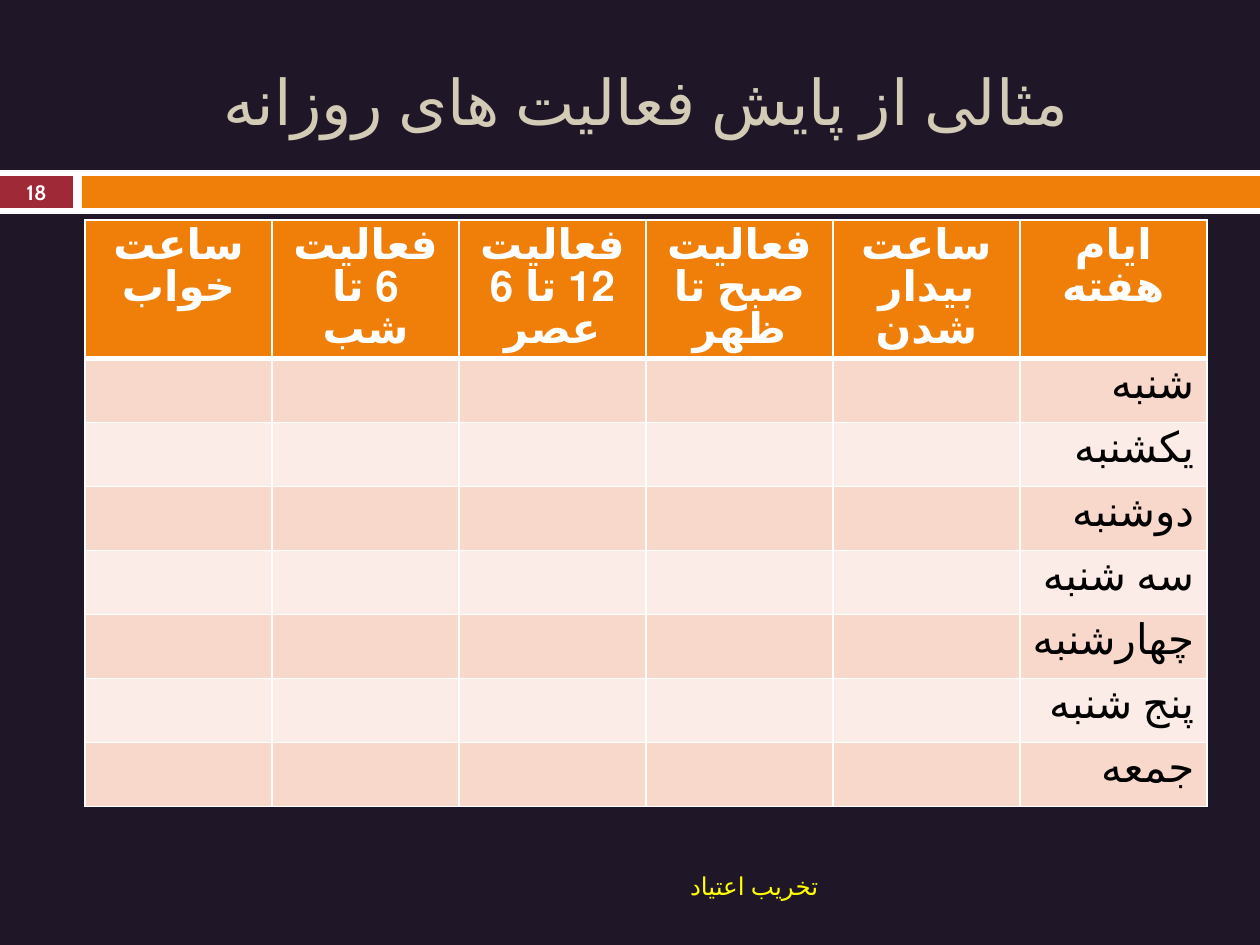
from typing import NamedTuple

from lxml import etree
from pptx import Presentation
from pptx.dml.color import RGBColor
from pptx.enum.lang import MSO_LANGUAGE_ID
from pptx.enum.shapes import MSO_SHAPE
from pptx.enum.text import MSO_ANCHOR, PP_ALIGN
from pptx.oxml.ns import qn
from pptx.util import Emu, Pt

RECT = MSO_SHAPE.RECTANGLE
MIDDLE = MSO_ANCHOR.MIDDLE
CENTER, RIGHT = PP_ALIGN.CENTER, PP_ALIGN.RIGHT
PERSIAN = MSO_LANGUAGE_ID.FARSI

EMU_PER_PX = 914400 // 126
FONT = "Cabin"
WHITE, BLACK, YELLOW = "FFFFFF", "000000", "FFFF00"
BACKGROUND, ORANGE, RED, BEIGE = "1F1727", "F07F09", "9F2936", "D3CBB6"
BAND_FILLS = ("F9D8CC", "FCECE7")

HEADERS = ("ساعت خواب", "فعالیت 6 تا شب", "فعالیت 12 تا 6 عصر",
           "فعالیت صبح تا ظهر", "ساعت بیدار شدن", "ایام هفته")
DAYS = ("شنبه", "یکشنبه", "دوشنبه", "سه شنبه", "چهارشنبه", "پنج شنبه", "جمعه")
COL_WIDTH, HEADER_HEIGHT, DAY_HEIGHT = 187, 138, 64


class Box(NamedTuple):
    left: int
    top: int
    width: int
    height: int


class Style(NamedTuple):
    size: float
    color: str
    align: PP_ALIGN
    bold: bool = False


BARS = (
    (Box(0, 170, 1260, 44), WHITE),
    (Box(0, 176, 73, 32), RED),
    (Box(82, 176, 1178, 32), ORANGE),
)
TITLE_STYLE = Style(36, BEIGE, CENTER)
FOOTER_STYLE = Style(14, YELLOW, RIGHT)
NUMBER_STYLE = Style(11.9, WHITE, CENTER, True)
HEADER_STYLE = Style(24, WHITE, CENTER, True)
DAY_STYLE = Style(24, BLACK, RIGHT)


def px(n: int) -> Emu:
    return Emu(n * EMU_PER_PX)


def emu_box(box: Box) -> list[Emu]:
    return [px(n) for n in box]


def paint(fill, color: str) -> None:
    fill.solid()
    fill.fore_color.rgb = RGBColor.from_string(color)


def write(tf, text: str, style: Style):
    p = tf.paragraphs[0]
    p.alignment = style.align
    r = p.add_run()
    r.text = text
    r.font.name = FONT
    r.font.language_id = PERSIAN
    r.font.size = Pt(style.size)
    r.font.bold = style.bold
    r.font.color.rgb = RGBColor.from_string(style.color)
    return p


def add_bar(s, box: Box, color: str) -> None:
    bar = s.shapes.add_shape(RECT, *emu_box(box))
    bar.shadow.inherit = False
    paint(bar.fill, color)
    bar.line.fill.background()


def add_text(s, box: Box, text: str, style: Style) -> None:
    tf = s.shapes.add_textbox(*emu_box(box)).text_frame
    tf.word_wrap = True
    tf.vertical_anchor = MIDDLE
    write(tf, text, style)


def format_cell(cell, color: str, bottom_width: int) -> None:
    """Give the cell white borders and a fill; borders must come first in the XML."""
    tc_pr = cell._tc.get_or_add_tcPr()
    for side in "LRTB":
        width = bottom_width if side == "B" else 1
        ln = etree.SubElement(tc_pr, qn(f"a:ln{side}"), w=str(Pt(width)))
        solid = etree.SubElement(ln, qn("a:solidFill"))
        etree.SubElement(solid, qn("a:srgbClr"), val=WHITE)
    paint(cell.fill, color)


def add_schedule(s, left: int, top: int) -> None:
    box = Box(left, top, COL_WIDTH * len(HEADERS),
              HEADER_HEIGHT + DAY_HEIGHT * len(DAYS))
    table = s.shapes.add_table(len(DAYS) + 1, len(HEADERS), *emu_box(box)).table
    for column in table.columns:
        column.width = px(COL_WIDTH)
    for i, row in enumerate(table.rows):
        row.height = px(DAY_HEIGHT if i else HEADER_HEIGHT)
        for cell in row.cells:
            if i:
                format_cell(cell, BAND_FILLS[(i - 1) % 2], 1)
            else:
                format_cell(cell, ORANGE, 3)
    for j, header in enumerate(HEADERS):
        p = write(table.cell(0, j).text_frame, header, HEADER_STYLE)
        p.line_spacing = Pt(HEADER_STYLE.size)
    for i, day in enumerate(DAYS, 1):
        write(table.cell(i, len(HEADERS) - 1).text_frame, day, DAY_STYLE)


def main() -> None:
    prs = Presentation()
    prs.slide_width, prs.slide_height = px(1260), px(945)
    s = prs.slides.add_slide(prs.slide_layouts[5])
    paint(s.background.fill, BACKGROUND)
    for box, color in BARS:
        add_bar(s, box, color)

    title = s.shapes.title
    title.left, title.top, title.width, title.height = emu_box(Box(84, 32, 1124, 136))
    title.text_frame.vertical_anchor = MIDDLE
    write(title.text_frame, "مثالی از پایش فعالیت های روزانه", TITLE_STYLE)

    add_text(s, Box(84, 861, 747, 50), "تخریب اعتیاد", FOOTER_STYLE)
    add_text(s, Box(0, 175, 73, 34), "18", NUMBER_STYLE)
    add_schedule(s, 85, 220)
    prs.save("out.pptx")


if __name__ == "__main__":
    main()
